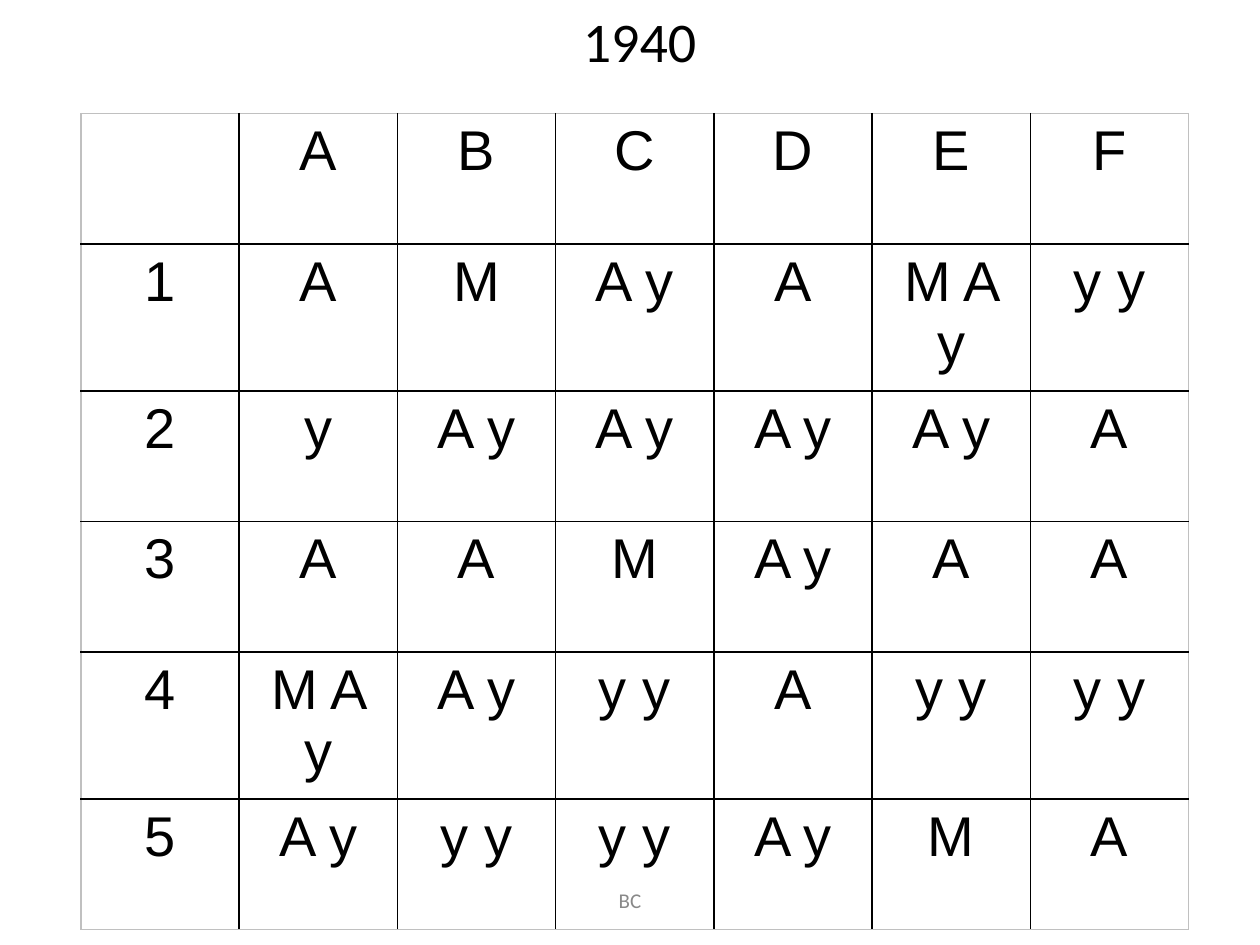
from lxml.etree import SubElement
from pptx import Presentation
from pptx.dml.color import RGBColor
from pptx.enum.text import MSO_ANCHOR as Anchor, PP_ALIGN as Align
from pptx.oxml.ns import qn
from pptx.util import Cm, Pt

YEAR = "1940"
FOOTER = "BC"
GRID = [
    ["", "A", "B", "C", "D", "E", "F"],
    ["1", "A", "M", "A y", "A", "M A y", "y y"],
    ["2", "y", "A y", "A y", "A y", "A y", "A"],
    ["3", "A", "A", "M", "A y", "A", "A"],
    ["4", "M A y", "A y", "y y", "A", "y y", "y y"],
    ["5", "A y", "y y", "y y", "A y", "M", "A"],
]
BLACK, FRAME, MUTED = "000000", "C0C0C0", "898989"
LEFT, TOP, COLUMN, ROW = 1.63, 2.29, 3.19, 2.63


def color(value):
    return RGBColor.from_string(value)


def write(frame, text, size=32, font="Calibri", fill=BLACK, align=Align.CENTER):
    paragraph = frame.paragraphs[0]
    paragraph.alignment = align
    run = paragraph.add_run()
    run.text = text
    run.font.size = Pt(size)
    run.font.name = font
    run.font.color.rgb = color(fill)


def add_border(cell, side, value):
    line = SubElement(cell._tc.get_or_add_tcPr(), qn(f"a:ln{side}"), w=str(Pt(1)))
    SubElement(SubElement(line, qn("a:solidFill")), qn("a:srgbClr"), val=value)


def add_grid(slide):
    rows, columns = len(GRID), len(GRID[0])
    table = slide.shapes.add_table(
        rows, columns, Cm(LEFT), Cm(TOP), Cm(COLUMN * columns), Cm(ROW * rows)
    ).table
    table.first_row = table.horz_banding = False
    for column in table.columns:
        column.width = Cm(COLUMN)
    for r, entries in enumerate(GRID):
        table.rows[r].height = Cm(ROW)
        for c, entry in enumerate(entries):
            cell = table.cell(r, c)
            outer = {"L": c == 0, "R": c == columns - 1, "T": r == 0, "B": r == rows - 1}
            for side, on_edge in outer.items():
                add_border(cell, side, FRAME if on_edge else BLACK)
            cell.fill.background()
            if entry:
                write(cell.text_frame, entry, font="Arial")


def main():
    deck = Presentation()
    deck.slide_width, deck.slide_height = Cm(25.4), Cm(19.05)
    slide = deck.slides.add_slide(deck.slide_layouts[6])

    footer = slide.shapes.add_textbox(Cm(8.68), Cm(17.65), Cm(8.04), Cm(1.01)).text_frame
    footer.word_wrap = True
    footer.vertical_anchor = Anchor.MIDDLE
    write(footer, FOOTER, size=12, fill=MUTED)

    add_grid(slide)

    year = slide.shapes.add_textbox(Cm(11.5), Cm(0), Cm(2.8), Cm(1.61)).text_frame
    year.word_wrap = False
    write(year, YEAR, align=Align.LEFT)

    deck.save("out.pptx")


if __name__ == "__main__":
    main()
